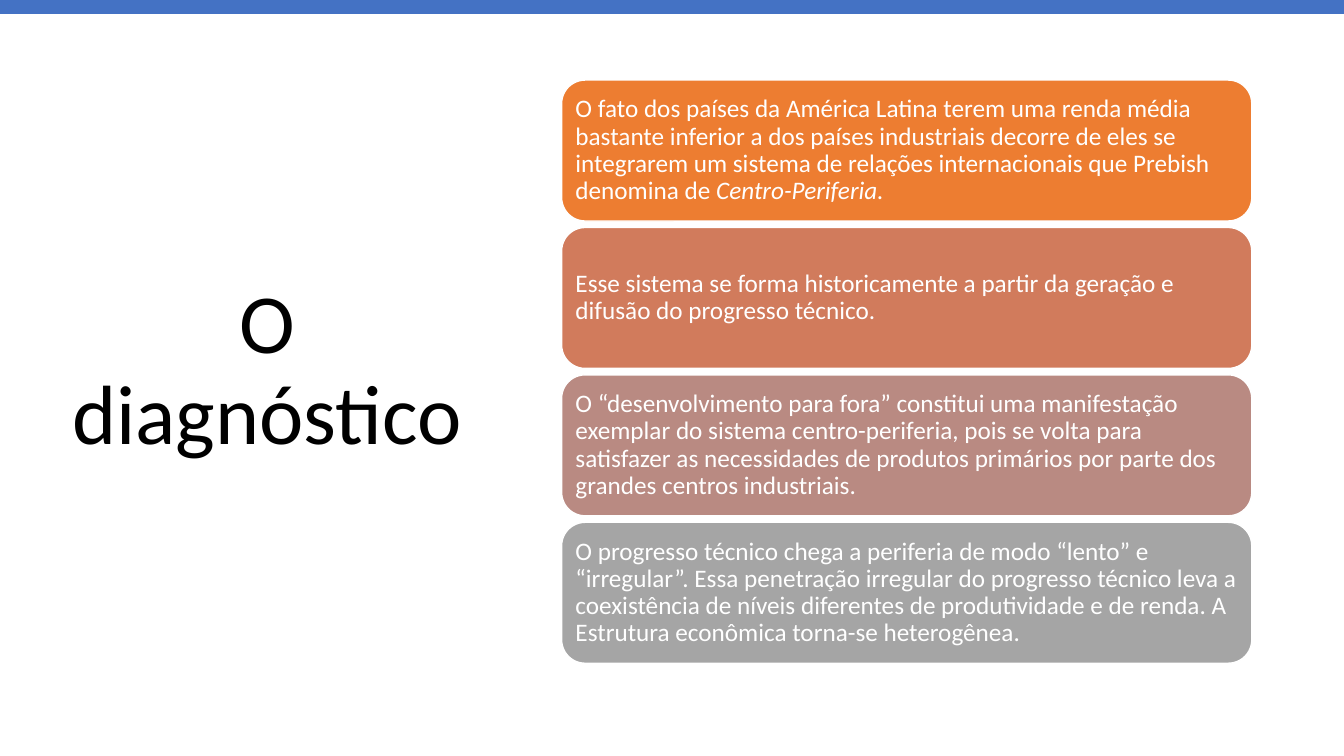
from dataclasses import dataclass

from pptx import Presentation
from pptx.dml.color import RGBColor
from pptx.enum.shapes import MSO_SHAPE
from pptx.enum.text import MSO_ANCHOR, MSO_AUTO_SIZE, PP_ALIGN
from pptx.util import Pt

RECTANGLE = MSO_SHAPE.RECTANGLE
ROUNDED = MSO_SHAPE.ROUNDED_RECTANGLE
MIDDLE = MSO_ANCHOR.MIDDLE
LEFT, CENTER = PP_ALIGN.LEFT, PP_ALIGN.CENTER
NO_AUTOFIT = MSO_AUTO_SIZE.NONE
TITLE_ONLY = 5


@dataclass(frozen=True)
class Theme:
    font: str = "Calibri"
    title_size: float = 60
    card_size: float = 18
    line_spacing: float = 0.9
    title_color: str = "000000"
    card_text: str = "FFFFFF"
    card_line: str = "FFFFFF"
    band: str = "4472C4"
    cards: tuple = ("ED7D31", "D17B5C", "B98A82", "A5A5A5")


@dataclass(frozen=True)
class Box:
    left: float
    top: float
    width: float
    height: float

    def in_points(self):
        return [Pt(v) for v in (self.left, self.top, self.width, self.height)]


THEME = Theme()
PAGE = Box(0, 0, 960, 540)
CARD_GAP = 4.6
CARD_INSET = 5

# Each card is a list of (text, italic) spans.
CARDS = [
    [("O fato dos países da América Latina terem uma renda média bastante "
      "inferior a dos países industriais decorre de eles se integrarem um "
      "sistema de relações internacionais que Prebish denomina de ", False),
     ("Centro-Periferia.", True)],
    [("Esse sistema se forma historicamente a partir da geração e difusão "
      "do progresso técnico.", False)],
    [("O “desenvolvimento para fora” constitui uma manifestação exemplar do "
      "sistema centro-periferia, pois se volta para satisfazer as "
      "necessidades de produtos primários por parte dos grandes centros "
      "industriais.", False)],
    [("O progresso técnico chega a periferia de modo “lento” e “irregular”. "
      "Essa penetração irregular do progresso técnico leva a coexistência de "
      "níveis diferentes de produtividade e de renda. A Estrutura econômica "
      "torna-se heterogênea.", False)],
]


def write(frame, spans, size, color, alignment):
    frame.word_wrap = True
    frame.auto_size = NO_AUTOFIT
    frame.vertical_anchor = MIDDLE
    para = frame.paragraphs[0]
    para.alignment = alignment
    para.line_spacing = THEME.line_spacing
    for text, italic in spans:
        span = para.add_run()
        span.text = text
        span.font.name = THEME.font
        span.font.size = Pt(size)
        span.font.italic = italic
        span.font.color.rgb = RGBColor.from_string(color)


def add_filled(page, kind, box, fill):
    shape = page.shapes.add_shape(kind, *box.in_points())
    shape.shadow.inherit = False
    shape.fill.solid()
    shape.fill.fore_color.rgb = RGBColor.from_string(fill)
    shape.line.fill.background()
    return shape


def place_title(page, box):
    title = page.shapes.title
    title.left, title.top, title.width, title.height = box.in_points()
    write(title.text_frame, [("O diagnóstico", False)],
          THEME.title_size, THEME.title_color, CENTER)


def add_card(page, box, spans, fill):
    card = add_filled(page, ROUNDED, box, fill)
    card.line.color.rgb = RGBColor.from_string(THEME.card_line)
    card.line.width = Pt(1)
    frame = card.text_frame
    frame.margin_left = frame.margin_right = Pt(CARD_INSET)
    frame.margin_top = frame.margin_bottom = Pt(CARD_INSET)
    write(frame, spans, THEME.card_size, THEME.card_text, LEFT)


def add_card_stack(page, box):
    """Divide the box into equal cards, one above the other."""
    height = (box.height - CARD_GAP * (len(CARDS) - 1)) / len(CARDS)
    for index, (spans, fill) in enumerate(zip(CARDS, THEME.cards)):
        top = box.top + index * (height + CARD_GAP)
        add_card(page, Box(box.left, top, box.width, height), spans, fill)


def build_diagnosis(deck):
    page = deck.slides.add_slide(deck.slide_layouts[TITLE_ONLY])
    place_title(page, Box(41, 49, 299.5, 433.4))
    add_filled(page, RECTANGLE, Box(0, 0, PAGE.width, 10), THEME.band)
    add_card_stack(page, Box(401.2, 57.2, 493, 416.6))


def main():
    deck = Presentation()
    deck.slide_width, deck.slide_height = Pt(PAGE.width), Pt(PAGE.height)
    build_diagnosis(deck)
    deck.save("out.pptx")


if __name__ == "__main__":
    main()
